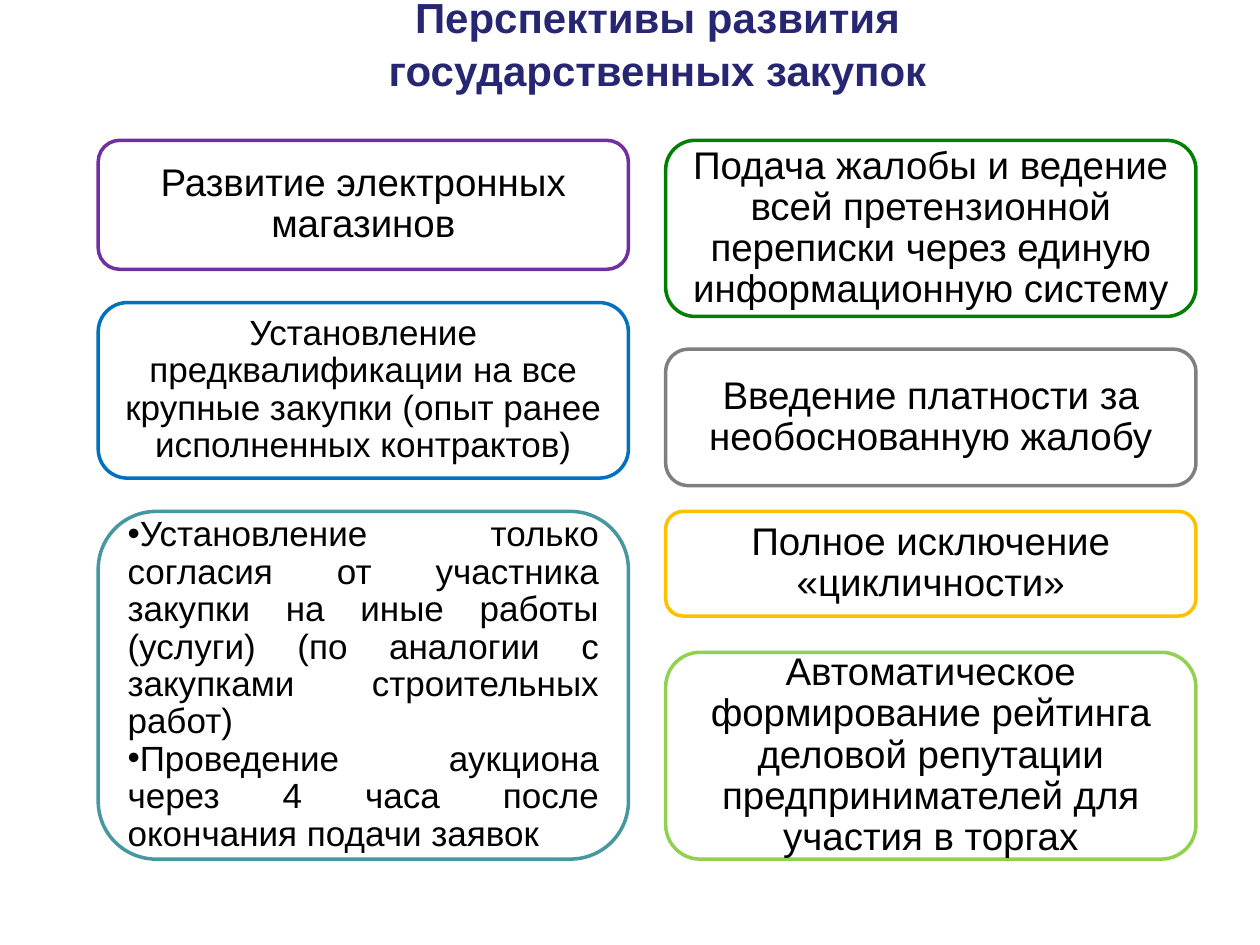
from pptx import Presentation
from pptx.dml.color import RGBColor
from pptx.enum.shapes import MSO_SHAPE
from pptx.enum.text import MSO_ANCHOR, MSO_AUTO_SIZE, PP_ALIGN
from pptx.oxml.ns import qn
from pptx.util import Cm, Pt
from lxml import etree

ROUND = MSO_SHAPE.ROUNDED_RECTANGLE
MIDDLE = MSO_ANCHOR.MIDDLE
CENTER, JUSTIFY = PP_ALIGN.CENTER, PP_ALIGN.JUSTIFY
NO_FIT = MSO_AUTO_SIZE.NONE

LEFT, RIGHT, WIDTH = 1.98, 13.42, 10.69

# left, top, height (cm), line colour, text size, paragraphs
CARDS = [
    (LEFT, 2.83, 2.6, "7030A0", 22, ["Развитие электронных магазинов"]),
    (LEFT, 6.1, 3.54, "0070C0", 20,
     ["Установление предквалификации на все крупные закупки "
      "(опыт ранее исполненных контрактов)"]),
    (LEFT, 10.31, 7.01, "4597A0", 20,
     ["Установление только согласия от участника закупки на иные работы "
      "(услуги) (по аналогии с закупками строительных работ)",
      "Проведение аукциона через 4 часа после окончания подачи заявок"]),
    (RIGHT, 2.83, 3.55, "008000", 22,
     ["Подача жалобы и ведение всей претензионной переписки "
      "через единую информационную систему"]),
    (RIGHT, 7.04, 2.75, "7F7F7F", 22,
     ["Введение платности за необоснованную жалобу"]),
    (RIGHT, 10.31, 2.11, "FFC000", 22, ["Полное исключение «цикличности»"]),
    (RIGHT, 13.15, 4.17, "92D050", 22,
     ["Автоматическое формирование рейтинга деловой репутации "
      "предпринимателей для участия в торгах"]),
]


def rgb(code):
    return RGBColor.from_string(code)


def style(para, size, color="000000", bold=False, align=CENTER, spacing=0.89):
    para.alignment = align
    para.line_spacing = spacing
    para.space_before = Pt(0)
    font = para.font
    font.name, font.size, font.bold = "Arial", Pt(size), bold
    font.color.rgb = rgb(color)


def add_bullet(para):
    props = para._p.get_or_add_pPr()
    props.set("marL", "0")
    props.set("indent", "0")
    etree.SubElement(props, qn("a:buFont"), typeface="Arial")
    etree.SubElement(props, qn("a:buChar"), char="•")


def set_title(slide, text):
    title = slide.shapes.title
    title.left, title.top = Cm(4.85), Cm(0.05)
    title.width, title.height = Cm(16.81), Cm(1.6)
    frame = title.text_frame
    frame.text = text
    frame.word_wrap = True
    frame.auto_size = NO_FIT
    frame.vertical_anchor = MIDDLE
    style(frame.paragraphs[0], 24, "262673", bold=True, spacing=1.05)


def add_card(slide, left, top, height, color, size, texts):
    card = slide.shapes.add_shape(ROUND, Cm(left), Cm(top), Cm(WIDTH), Cm(height))
    card.shadow.inherit = False
    card.fill.background()
    card.line.color.rgb = rgb(color)
    card.line.width = Pt(2)
    frame = card.text_frame
    frame.word_wrap = True
    frame.vertical_anchor = MIDDLE
    listed = len(texts) > 1
    frame.text = "\n".join(texts)
    for para in frame.paragraphs:
        if listed:
            add_bullet(para)
        style(para, size, align=JUSTIFY if listed else CENTER)


def main():
    deck = Presentation()
    deck.slide_width, deck.slide_height = Cm(25.4), Cm(19.05)
    slide = deck.slides.add_slide(deck.slide_layouts[5])
    set_title(slide, "Перспективы развития государственных закупок")
    for card in CARDS:
        add_card(slide, *card)
    deck.save("out.pptx")


if __name__ == "__main__":
    main()
